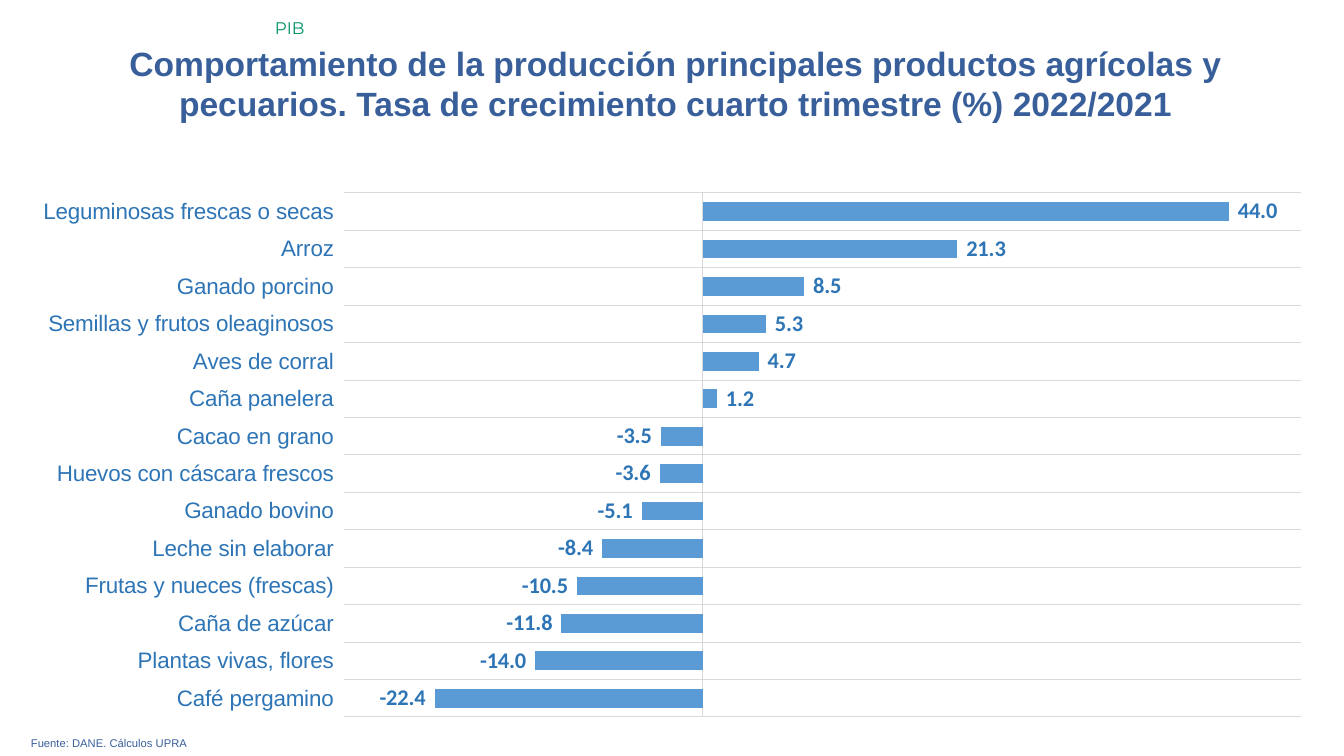
from dataclasses import dataclass

from lxml import etree
from pptx import Presentation
from pptx import util as u
from pptx.chart.data import CategoryChartData
from pptx.dml.color import RGBColor
from pptx.enum import chart as ch
from pptx.enum import text
from pptx.oxml.ns import qn


@dataclass(frozen=True)
class Theme:
    """Colours, fonts and type sizes of the slide."""

    navy: str = "395F9B"
    green: str = "009267"
    label: str = "2E75B6"
    bar: str = "5B9BD5"
    grid: str = "D9D9D9"
    base: str = "000000"
    body_font: str = "Arial"
    value_font: str = "Calibri"
    tag_font: str = "Montserrat"
    title_size: float = 24
    label_size: float = 16
    tag_size: float = 12
    base_size: float = 10.5
    source_size: float = 8


THEME = Theme()
SLIDE_SIZE = (1344, 756)
EMU_PER_PX = 12192000 / SLIDE_SIZE[0]
NUMBER_FORMAT = '_-* #,##0.0_-;\\-* #,##0.0_-;_-* "-"??_-;'
PLOT_AREA = {"x": 0.25, "y": 0.02, "w": 0.73, "h": 0.96}
GROWTH = {
    "Café pergamino": -22.4,
    "Plantas vivas, flores": -14.0,
    "Caña de azúcar": -11.8,
    "Frutas y nueces (frescas)": -10.5,
    "Leche sin elaborar": -8.4,
    "Ganado bovino": -5.1,
    "Huevos con cáscara frescos": -3.6,
    "Cacao en grano": -3.5,
    "Caña panelera": 1.2,
    "Aves de corral": 4.7,
    "Semillas y frutos oleaginosos": 5.3,
    "Ganado porcino": 8.5,
    "Arroz": 21.3,
    "Leguminosas frescas o secas": 44.0,
}


def px(length):
    """Turn pixels into EMU."""
    return u.Emu(round(length * EMU_PER_PX))


def style_font(font, name, size, color, bold=False):
    """Set the face, size, colour and weight of a font."""
    font.name = name
    font.size = u.Pt(size)
    font.color.rgb = RGBColor.from_string(color)
    font.bold = bold


def style_line(line):
    """Give an axis or grid line its thin grey stroke."""
    line.color.rgb = RGBColor.from_string(THEME.grid)
    line.width = u.Pt(0.75)


def add_text(page, frame, words, align, name, size, color, bold=False):
    """Add a wrapping text box with one styled paragraph."""
    box = page.shapes.add_textbox(*map(px, frame))
    box.text_frame.word_wrap = True
    box.text_frame.auto_size = text.MSO_AUTO_SIZE.SHAPE_TO_FIT_TEXT
    para = box.text_frame.paragraphs[0]
    para.text = words
    para.alignment = align
    style_font(para.runs[0].font, name, size, color, bold)


def place_plot(chart):
    """Fix the inner plot area as fractions of the chart frame."""
    plot_area = chart.element.find(".//" + qn("c:plotArea"))
    layout = plot_area.find(qn("c:layout"))
    if layout is None:
        layout = etree.Element(qn("c:layout"))
        plot_area.insert(0, layout)
    manual = etree.SubElement(layout, qn("c:manualLayout"))
    settings = {"layoutTarget": "inner", "xMode": "edge", "yMode": "edge", **PLOT_AREA}
    for tag, value in settings.items():
        etree.SubElement(manual, qn(f"c:{tag}")).set("val", str(value))


def style_axes(chart):
    """Show the product names at the left and hide the value axis."""
    products = chart.category_axis
    products.tick_label_position = ch.XL_TICK_LABEL_POSITION.LOW
    products.major_tick_mark = ch.XL_TICK_MARK.NONE
    products.minor_tick_mark = ch.XL_TICK_MARK.NONE
    products.has_major_gridlines = True
    style_line(products.major_gridlines.format.line)
    style_line(products.format.line)
    style_font(products.tick_labels.font, THEME.body_font, THEME.label_size, THEME.label)

    rates = chart.value_axis
    rates.minimum_scale, rates.maximum_scale = -30, 50
    rates.has_major_gridlines = False
    rates.visible = False


def style_bars(plot):
    """Colour the bars and label each with its value."""
    plot.gap_width = 100
    plot.vary_by_categories = False
    bars = plot.series[0]
    bars.invert_if_negative = False
    bars.format.fill.solid()
    bars.format.fill.fore_color.rgb = RGBColor.from_string(THEME.bar)
    labels = bars.data_labels
    labels.show_value = True
    labels.position = ch.XL_LABEL_POSITION.OUTSIDE_END
    labels.number_format = NUMBER_FORMAT
    labels.number_format_is_linked = False
    style_font(labels.font, THEME.value_font, THEME.label_size, THEME.label, bold=True)


def add_growth_chart(page, frame):
    """Add the bar chart of growth rates by product."""
    data = CategoryChartData(number_format=NUMBER_FORMAT)
    data.categories = list(GROWTH)
    data.add_series("Series 1", list(GROWTH.values()))
    chart = page.shapes.add_chart(
        ch.XL_CHART_TYPE.BAR_CLUSTERED, *map(px, frame), data
    ).chart
    chart.has_title = False
    chart.has_legend = False
    style_font(chart.font, THEME.body_font, THEME.base_size, THEME.base)
    style_axes(chart)
    style_bars(chart.plots[0])
    place_plot(chart)


def main():
    """Build the slide and save the deck."""
    deck = Presentation()
    deck.slide_width, deck.slide_height = map(px, SLIDE_SIZE)
    page = deck.slides.add_slide(deck.slide_layouts[6])
    align = text.PP_ALIGN
    add_text(
        page, (45, 38, 1261, 92),
        "Comportamiento de la producción principales productos agrícolas y pecuarios. "
        "Tasa de crecimiento cuarto trimestre (%) 2022/2021",
        align.CENTER, THEME.body_font, THEME.title_size, THEME.navy, bold=True,
    )
    add_text(
        page, (21, 731, 1301, 24), "Fuente: DANE. Cálculos UPRA",
        align.JUSTIFY, THEME.body_font, THEME.source_size, THEME.navy,
    )
    add_text(
        page, (265, 13, 1079, 30), "PIB",
        align.LEFT, THEME.tag_font, THEME.tag_size, THEME.green,
    )
    add_growth_chart(page, (16, 182, 1311, 546))
    deck.save("out.pptx")


if __name__ == "__main__":
    main()
